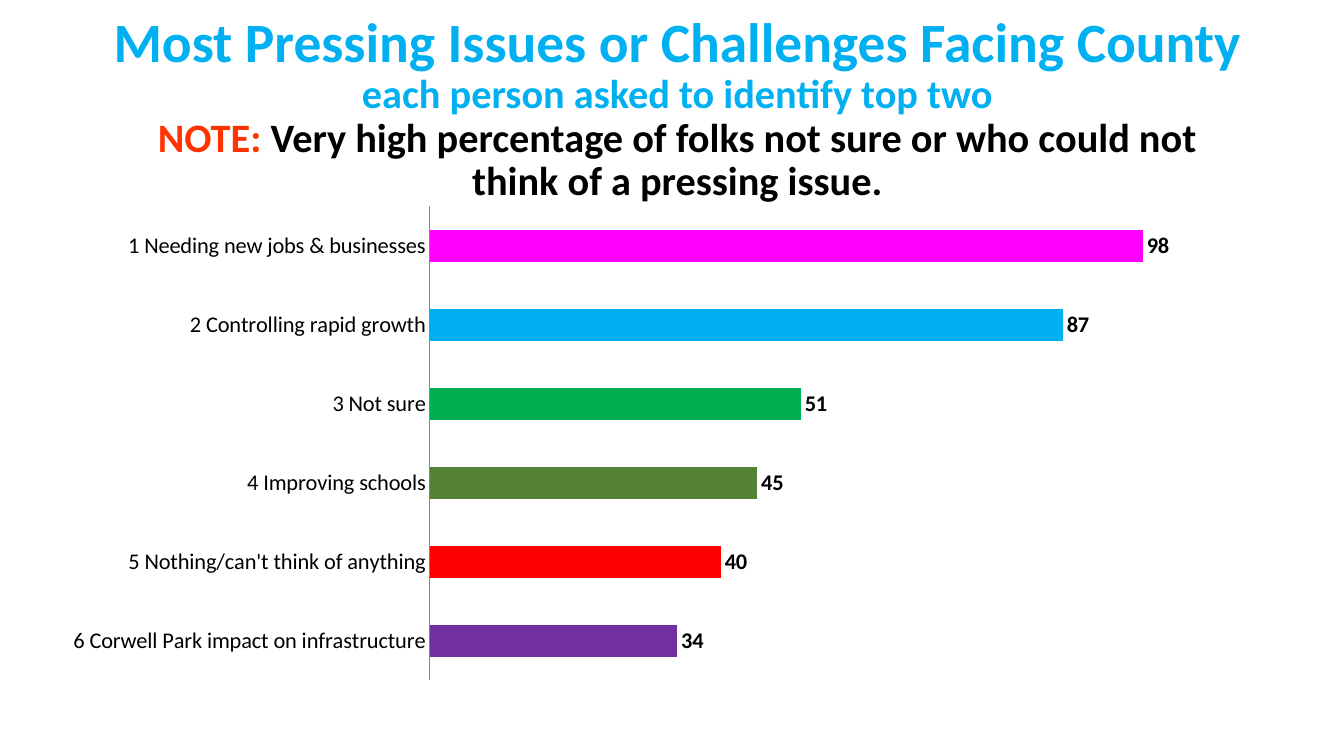
from copy import deepcopy
from typing import NamedTuple

from lxml.etree import SubElement
from pptx import Presentation
from pptx.chart.chart import Chart
from pptx.chart.data import CategoryChartData
from pptx.dml.color import RGBColor
from pptx.enum.chart import XL_CHART_TYPE, XL_LABEL_POSITION, XL_TICK_LABEL_POSITION, XL_TICK_MARK
from pptx.enum.text import MSO_ANCHOR, MSO_AUTO_SIZE, PP_ALIGN
from pptx.oxml.ns import qn
from pptx.slide import Slide
from pptx.util import Inches, Pt

FONT = "Calibri"


class Part(NamedTuple):
    text: str
    size: float
    color: str
    ends: bool  # a line break follows


class Issue(NamedTuple):
    name: str
    votes: int
    color: str


PARTS = [
    Part("Most Pressing Issues or Challenges Facing County", 39.6, "00B0F0", True),
    Part("each person asked to identify top two", 28.8, "00B0F0", True),
    Part("NOTE: ", 28.8, "FF3300", False),
    Part("Very high percentage of folks not sure or who could not", 28.8, "000000", True),
    Part("think of a pressing issue.", 28.8, "000000", False),
]

# Bars run from the bottom up
ISSUES = [
    Issue("6 Corwell Park impact on infrastructure", 34, "7030A0"),
    Issue("5 Nothing/can't think of anything", 40, "FF0000"),
    Issue("4 Improving schools", 45, "548235"),
    Issue("3 Not sure", 51, "00B050"),
    Issue("2 Controlling rapid growth", 87, "00B0F0"),
    Issue("1 Needing new jobs & businesses", 98, "FF00FF"),
]


def paint(target, color: str) -> None:
    """Give a fill or a line format a solid colour."""
    fill = getattr(target, "fill", target)
    fill.solid()
    fill.fore_color.rgb = RGBColor.from_string(color)


def add_title(slide: Slide) -> None:
    title = slide.shapes.title
    title.left, title.top = Inches(0.33), Inches(0.13)
    title.width, title.height = Inches(12.78), Inches(1.91)
    frame = title.text_frame
    frame.word_wrap = True
    frame.auto_size = MSO_AUTO_SIZE.NONE
    frame.vertical_anchor = MSO_ANCHOR.MIDDLE
    para = frame.paragraphs[0]
    para.alignment = PP_ALIGN.CENTER
    para.line_spacing = 0.9
    for part in PARTS:
        run = para.add_run()
        run.text = part.text
        font = run.font
        font.name, font.size, font.bold = FONT, Pt(part.size), True
        paint(font, part.color)
        if part.ends:
            # The break takes the size of the line it closes
            para.add_line_break()
            para._p[-1].append(deepcopy(run._r.rPr))


def place_plot(chart: Chart, x: float, y: float, w: float, h: float) -> None:
    """Fix the inner plot area, in fractions of the chart."""
    area = chart._chartSpace.chart.plotArea
    for old in area.findall(qn("c:layout")):
        area.remove(old)
    layout = SubElement(area, qn("c:layout"))
    area.insert(0, layout)
    manual = SubElement(layout, qn("c:manualLayout"))
    rules = {"layoutTarget": "inner", "xMode": "edge", "yMode": "edge",
             "x": x, "y": y, "w": w, "h": h}
    for tag, value in rules.items():
        SubElement(manual, qn(f"c:{tag}")).set("val", str(value))


def add_bars(slide: Slide) -> None:
    data = CategoryChartData()
    data.categories = [issue.name for issue in ISSUES]
    data.add_series("Series 1", [issue.votes for issue in ISSUES])
    chart = slide.shapes.add_chart(
        XL_CHART_TYPE.BAR_CLUSTERED, Inches(0.35), Inches(1.95),
        Inches(12.83), Inches(4.9), data).chart
    chart.has_legend = chart.has_title = False
    chart.font.name, chart.font.size = FONT, Pt(10)
    paint(chart.font, "000000")
    place_plot(chart, 0.305, 0.02, 0.675, 0.96)

    # Axes
    names = chart.category_axis
    names.major_tick_mark = names.minor_tick_mark = XL_TICK_MARK.NONE
    names.tick_label_position = XL_TICK_LABEL_POSITION.NEXT_TO_AXIS
    names.tick_labels.font.size = Pt(16)
    names.format.line.width = Pt(0.75)
    paint(names.format.line, "868686")
    scale = chart.value_axis
    scale.visible = scale.has_major_gridlines = False
    scale.major_tick_mark = XL_TICK_MARK.NONE
    scale.minimum_scale, scale.maximum_scale = 0, 120

    # Bars and their values
    plot = chart.plots[0]
    plot.gap_width, plot.overlap = 150, -25
    plot.vary_by_categories = False
    bars = plot.series[0]
    paint(bars.format, "5B9BD5")
    for i, issue in enumerate(ISSUES):
        paint(bars.points[i].format, issue.color)
    labels = bars.data_labels
    labels.show_value = True
    labels.position = XL_LABEL_POSITION.OUTSIDE_END
    labels.font.size, labels.font.bold = Pt(16), True


def main() -> None:
    deck = Presentation()
    deck.slide_width, deck.slide_height = Inches(13.33), Inches(7.5)
    slide = deck.slides.add_slide(deck.slide_layouts[5])
    add_title(slide)
    add_bars(slide)
    deck.save("out.pptx")


if __name__ == "__main__":
    main()
